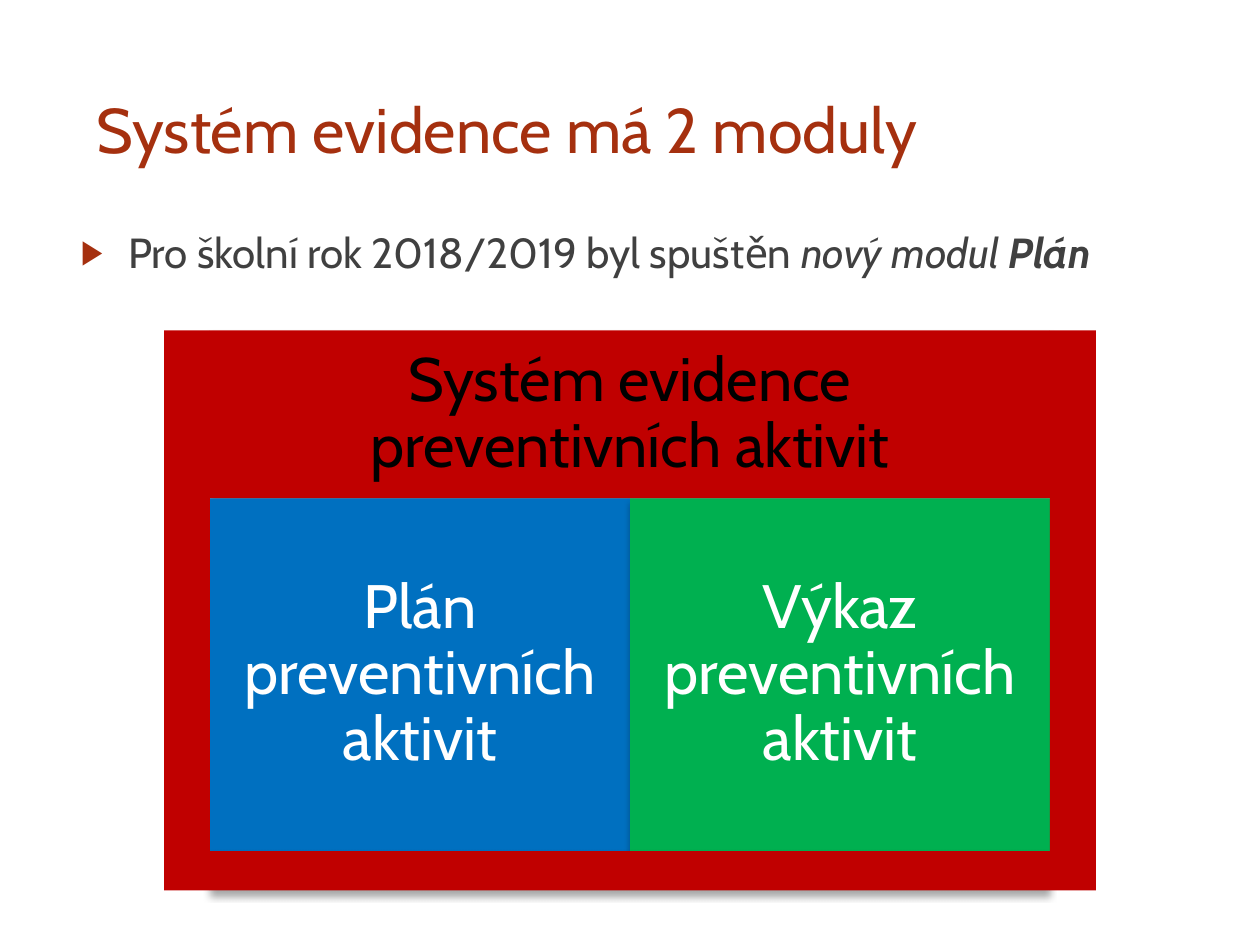
from dataclasses import dataclass
from typing import Any

from lxml.etree import SubElement as Sub
from pptx import Presentation
from pptx.dml.color import RGBColor as Rgb
from pptx.enum.shapes import MSO_SHAPE as Kind
from pptx.enum.text import MSO_ANCHOR as Anchor, MSO_AUTO_SIZE as Fit, PP_ALIGN as Align
from pptx.oxml.ns import qn
from pptx.util import Pt


@dataclass(frozen=True)
class Theme:
    font: str = "Cabin"
    rust: str = "A5300F"
    grey: str = "404040"
    red: str = "C00000"
    blue: str = "0070C0"
    green: str = "00B050"
    black: str = "000000"
    white: str = "FFFFFF"
    head: float = 36
    body: float = 24
    label: float = 35


@dataclass(frozen=True)
class Box:
    left: float
    top: float
    width: float
    height: float
    fill: str
    text: str = ""
    ink: str = "FFFFFF"
    shade: bool = True


THEME = Theme()


def apply(item: Any, form: dict[str, Any]) -> None:
    for name, value in form.items():
        setattr(item, name, value)


def place(item: Any, left: float, top: float, width: float, height: float) -> None:
    apply(item, {"left": Pt(left), "top": Pt(top), "width": Pt(width), "height": Pt(height)})


def write(para: Any, text: str, size: float, ink: str, **style: bool) -> None:
    run = para.add_run()
    run.text = text
    apply(run.font, {"name": THEME.font, "size": Pt(size), **style})
    run.font.color.rgb = Rgb.from_string(ink)


def add_shade(shape: Any) -> None:
    effects = shape._element.spPr.find(qn("a:effectLst"))
    outer = Sub(effects, qn("a:outerShdw"), blurRad=str(Pt(4)), dist=str(Pt(3)),
                dir="5400000", rotWithShape="0")
    tint = Sub(outer, qn("a:srgbClr"), val=THEME.black)
    Sub(tint, qn("a:alpha"), val="35000")


def add_mark(para: Any) -> None:
    props = para._p.get_or_add_pPr()
    apply_xml = {"marL": str(Pt(27)), "indent": str(-Pt(27))}
    for name, value in apply_xml.items():
        props.set(name, value)
    Sub(Sub(props, qn("a:buClr")), qn("a:srgbClr"), val=THEME.rust)
    Sub(props, qn("a:buSzPct"), val="80000")
    Sub(props, qn("a:buChar"), char="▶")


def draw(slide: Any, box: Box) -> None:
    shape = slide.shapes.add_shape(
        Kind.RECTANGLE, Pt(box.left), Pt(box.top), Pt(box.width), Pt(box.height))
    shape.fill.solid()
    shape.fill.fore_color.rgb = Rgb.from_string(box.fill)
    shape.line.fill.background()
    shape.shadow.inherit = False
    if box.shade:
        add_shade(shape)
    if box.text:
        frame = shape.text_frame
        sides = ("left", "top", "right", "bottom")
        apply(frame, {f"margin_{side}": Pt(10.5) for side in sides})
        apply(frame, {"word_wrap": True, "vertical_anchor": Anchor.MIDDLE})
        para = frame.paragraphs[0]
        apply(para, {"alignment": Align.CENTER, "line_spacing": 0.9})
        write(para, box.text, THEME.label, box.ink)


def plan() -> list[Box]:
    left, top, width, height, rim = 120, 188.8, 480, 320, 26.2
    head, foot = 0.3 * height, 0.07 * height
    core, half = height - head - foot, width / 2
    boxes = [Box(left, top, width, head, THEME.red,
                 "Systém evidence preventivních aktivit", THEME.black)]
    parts = (("Plán", THEME.blue), ("Výkaz", THEME.green))
    boxes += [Box(left + i * half, top + head, half, core, fill,
                  f"{name} preventivních aktivit", THEME.white)
              for i, (name, fill) in enumerate(parts)]
    boxes.append(Box(left, top + head + core, width, foot, THEME.red))
    boxes += [Box(x, top, rim, height, THEME.red, shade=False)
              for x in (left - rim, left + width)]
    return boxes


def main() -> None:
    deck = Presentation()
    apply(deck, {"slide_width": Pt(720), "slide_height": Pt(540)})
    slide = deck.slides.add_slide(deck.slide_layouts[1])
    title, body = slide.shapes.title, slide.placeholders[1]
    place(title, 48, 48, 608.4, 104)
    place(body, 39, 126, 681, 79.2)
    form = {"vertical_anchor": Anchor.TOP, "auto_size": Fit.NONE, "word_wrap": True}
    for item in (title, body):
        apply(item.text_frame, form)
        item.text_frame.paragraphs[0].alignment = Align.LEFT

    write(title.text_frame.paragraphs[0], "Systém evidence má 2 moduly", THEME.head, THEME.rust)
    para = body.text_frame.paragraphs[0]
    para.space_before = Pt(10)
    add_mark(para)
    runs = (("Pro školní rok 2018/2019 byl spuštěn ", {}),
            ("nový modul ", {"italic": True}),
            ("Plán", {"italic": True, "bold": True}))
    for text, style in runs:
        write(para, text, THEME.body, THEME.grey, **style)

    for box in plan():
        draw(slide, box)
    deck.save("out.pptx")


if __name__ == "__main__":
    main()
